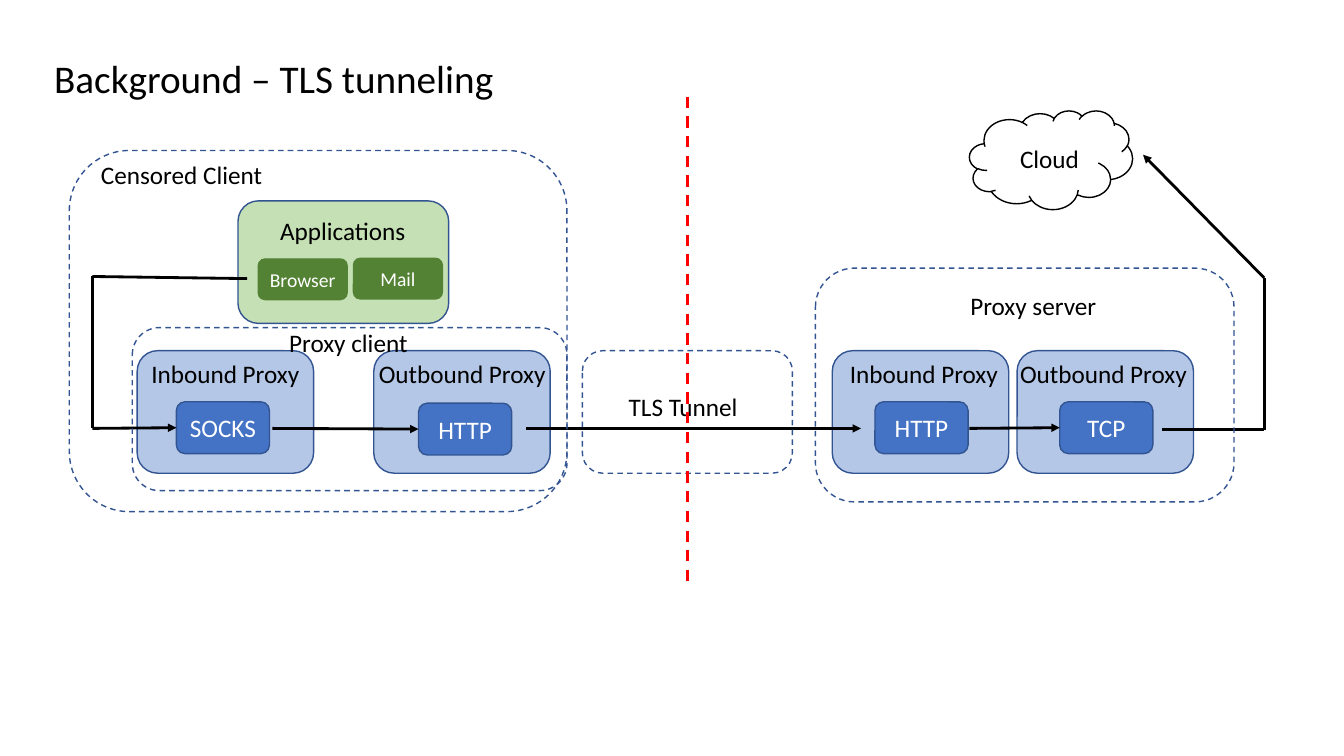
import pptx
import pptx.util
import pptx.dml.color
import pptx.enum.dml
import pptx.enum.shapes
import pptx.enum.text
import pptx.oxml
import pptx.oxml.ns

Pt = pptx.util.Pt
SHAPES = pptx.enum.shapes.MSO_SHAPE
ALIGN = pptx.enum.text.PP_ALIGN
ANCHOR = pptx.enum.text.MSO_ANCHOR
AUTO_SIZE = pptx.enum.text.MSO_AUTO_SIZE

FONT = "Calibri"
BLACK, WHITE, RED = "000000", "FFFFFF", "FF0000"
OUTLINE, PROXY_FILL, PROTOCOL_FILL = "325491", "B4C7E7", "4472C4"
GROUP_FILL, APP_FILL = "C5E0B4", "548235"
LABEL_HEIGHT = 29
PROXY_TOP, PROXY_WIDTH, PROXY_HEIGHT = 250.5, 126, 87.5
PROTOCOL_WIDTH, PROTOCOL_HEIGHT = 66.5, 37
LEFT_SIDE = 1


def rgb(colour):
    return pptx.dml.color.RGBColor.from_string(colour)


def write(frame, text, size=18, colour=BLACK, align=ALIGN.LEFT,
          anchor=ANCHOR.TOP, wrap=True, auto_size=AUTO_SIZE.NONE):
    frame.word_wrap = wrap
    frame.auto_size = auto_size
    frame.vertical_anchor = anchor
    paragraph = frame.paragraphs[0]
    paragraph.alignment = align
    run = paragraph.add_run()
    run.text = text
    run.font.name = FONT
    run.font.size = Pt(size)
    run.font.color.rgb = rgb(colour)


def style_line(line, colour, width, dashed):
    line.color.rgb = rgb(colour)
    line.width = Pt(width)
    if dashed:
        line.dash_style = pptx.enum.dml.MSO_LINE.DASH


def add_box(slide, left, top, width, height, fill=None, outline=OUTLINE,
            dashed=False, kind=SHAPES.ROUNDED_RECTANGLE):
    box = slide.shapes.add_shape(kind, Pt(left), Pt(top), Pt(width), Pt(height))
    box.shadow.inherit = False
    if fill:
        box.fill.solid()
        box.fill.fore_color.rgb = rgb(fill)
    else:
        box.fill.background()
    style_line(box.line, outline, 1, dashed)
    return box


def add_label(slide, text, left, top, width):
    label = slide.shapes.add_textbox(Pt(left), Pt(top), Pt(width), Pt(LABEL_HEIGHT))
    write(label.text_frame, text, wrap=False,
          auto_size=AUTO_SIZE.SHAPE_TO_FIT_TEXT)


def add_line(slide, start, end, colour=BLACK, arrow=False, dashed=False, target=None):
    """Draw a straight line; a target box is joined at its left side."""
    line = slide.shapes.add_connector(
        pptx.enum.shapes.MSO_CONNECTOR.STRAIGHT, *map(Pt, start + end))
    if target is not None:
        line.end_connect(target, LEFT_SIDE)
    style_line(line.line, colour, 2, dashed)
    if arrow:
        stroke = line.line._get_or_add_ln()
        stroke.append(pptx.oxml.parse_xml(
            f'<a:tailEnd {pptx.oxml.ns.nsdecls("a")} type="triangle"/>'))
    line._element.spPr.append(
        pptx.oxml.parse_xml(f'<a:effectLst {pptx.oxml.ns.nsdecls("a")}/>'))


def add_proxy(slide, direction, protocol, left, label_left, protocol_left, protocol_top):
    """Draw a proxy with its protocol, and return the protocol box."""
    add_box(slide, left, PROXY_TOP, PROXY_WIDTH, PROXY_HEIGHT, fill=PROXY_FILL)
    protocol_box = add_box(slide, protocol_left, protocol_top,
                           PROTOCOL_WIDTH, PROTOCOL_HEIGHT, fill=PROTOCOL_FILL)
    write(protocol_box.text_frame, protocol, colour=WHITE,
          align=ALIGN.CENTER, anchor=ANCHOR.MIDDLE)
    label_width = 122 if direction == "Inbound" else 134.5
    add_label(slide, f"{direction} Proxy", label_left, 252.5, label_width)
    return protocol_box


def add_applications(slide):
    add_box(slide, 170, 143.5, 150.5, 87.5, fill=GROUP_FILL)
    add_label(slide, "Applications", 193, 150.5, 105)
    for name, left, top in (("Browser", 184.5, 185), ("Mail", 252.5, 184.5)):
        app = add_box(slide, left, top, 63.5, 29, fill=APP_FILL, outline=APP_FILL)
        write(app.text_frame, name, size=14, colour=WHITE,
              align=ALIGN.CENTER, anchor=ANCHOR.MIDDLE, wrap=False)


def add_title(slide, text):
    title = slide.shapes.title
    title.left, title.top = Pt(31.5), Pt(3)
    title.width, title.height = Pt(828), Pt(104.5)
    write(title.text_frame, text, size=28, anchor=ANCHOR.MIDDLE)


def main():
    deck = pptx.Presentation()
    deck.slide_width, deck.slide_height = Pt(960), Pt(540)
    slide = deck.slides.add_slide(deck.slide_layouts[5])
    add_title(slide, "Background – TLS tunneling")

    socks = add_proxy(slide, "Inbound", "SOCKS", 98, 101, 126, 287)
    client_http = add_proxy(slide, "Outbound", "HTTP", 267, 263.5, 299, 288)
    add_proxy(slide, "Inbound", "HTTP", 594.5, 600, 625, 287)
    tcp = add_proxy(slide, "Outbound", "TCP", 726.5, 721.5, 757, 287)
    add_applications(slide)

    flow_y = 306
    client_turn, server_turn = 66, 903
    add_line(slide, (176.5, 199), (client_turn, 197.5))
    add_line(slide, (client_turn, flow_y), (client_turn, 197.5))
    add_line(slide, (client_turn, flow_y), (126, flow_y), arrow=True, target=socks)
    add_line(slide, (194.5, flow_y), (299, flow_y), arrow=True, target=client_http)
    add_line(slide, (376, flow_y), (615, flow_y), arrow=True)
    add_line(slide, (692.5, flow_y), (757, flow_y), arrow=True, target=tcp)
    add_line(slide, (server_turn, 307), (830, 307))
    add_line(slide, (server_turn, 307), (server_turn, 198.5))
    add_line(slide, (server_turn, 198.5), (816.5, 110.5), arrow=True)

    add_box(slide, 49.5, 107.5, 355.5, 258, dashed=True)
    add_label(slide, "Censored Client", 65, 110, 131)
    add_box(slide, 582.5, 191.5, 299, 167, dashed=True)
    add_label(slide, "Proxy server", 686, 204, 105)
    add_box(slide, 416, PROXY_TOP, 150, PROXY_HEIGHT, dashed=True)
    add_label(slide, "TLS Tunnel", 442, 276, 93.5)
    add_box(slide, 692.5, 79, 116.5, 70.5, outline=BLACK, kind=SHAPES.CLOUD)
    add_label(slide, "Cloud", 721.5, 98.5, 57)
    add_line(slide, (491, 69), (491, 417.5), colour=RED, dashed=True)
    add_box(slide, 94.5, 234, 310.5, 116.5, dashed=True)
    add_label(slide, "Proxy client", 199.5, 230.5, 100)

    deck.save("out.pptx")


if __name__ == "__main__":
    main()
